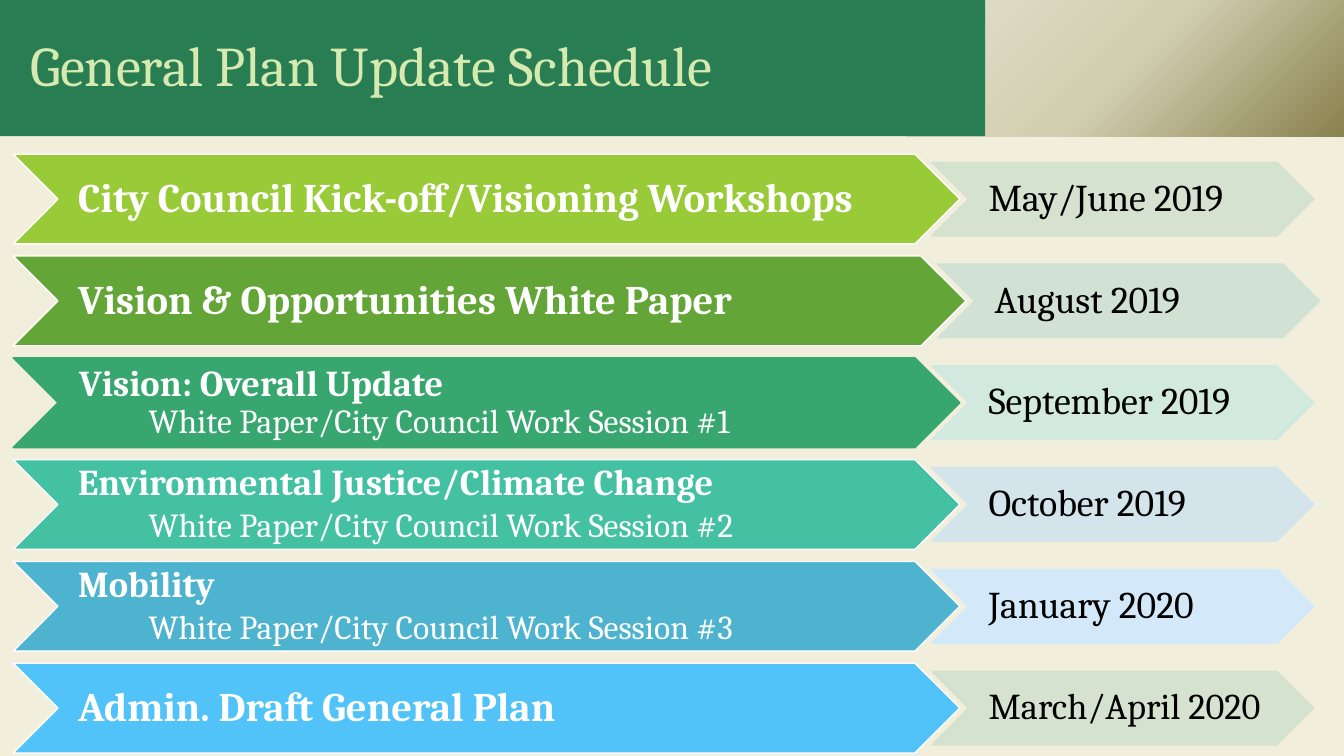
from lxml import etree
from pptx import Presentation
from pptx.dml.color import RGBColor
from pptx.enum.shapes import MSO_SHAPE
from pptx.enum.text import MSO_ANCHOR, PP_ALIGN
from pptx.oxml import parse_xml
from pptx.oxml.ns import qn
from pptx.util import Inches, Pt

RECT, PLATE, CHEVRON = MSO_SHAPE.RECTANGLE, MSO_SHAPE.PENTAGON, MSO_SHAPE.CHEVRON
MIDDLE, LEFT = MSO_ANCHOR.MIDDLE, PP_ALIGN.LEFT
WHITE = RGBColor(0xFF, 0xFF, 0xFF)
BLACK = RGBColor(0x00, 0x00, 0x00)
CREAM = RGBColor(0xF1, 0xEF, 0xDC)
PINE = RGBColor(0x29, 0x7D, 0x53)
PALE = RGBColor(0xD6, 0xEA, 0xAF)
LIME = RGBColor(0x99, 0xCB, 0x38)
LEAF = RGBColor(0x63, 0xA5, 0x37)
JADE = RGBColor(0x37, 0xA7, 0x6F)
TEAL = RGBColor(0x44, 0xC1, 0xA3)
SEA = RGBColor(0x4E, 0xB3, 0xCF)
SKY = RGBColor(0x51, 0xC3, 0xF9)
SAGE = RGBColor(0xD3, 0xE1, 0xCE)
MOSS = RGBColor(0xCE, 0xE1, 0xD5)
MINT = RGBColor(0xCF, 0xE9, 0xE0)
MIST = RGBColor(0xD0, 0xE5, 0xED)
ICE = RGBColor(0xD0, 0xE9, 0xFD)

# Grid: six rows of equal pitch, each a wide step and a narrow date
WIDTH, HEIGHT = 13.33, 7.5
HEAD = 0.18 * HEIGHT
TOP, PITCH = 1.53, 1.01
STEP_X, STEP_W, STEP_H = 0.13, 9.39, 0.89
DATE_X, DATE_W, DATE_H = 9.24, 3.79, 0.73
SHIFT = 0.06
TAB = 0.7

deck = Presentation()
deck.slide_width, deck.slide_height = Inches(WIDTH), Inches(HEIGHT)
slide = deck.slides.add_slide(deck.slide_layouts[6])
slide.background.fill.solid()
slide.background.fill.fore_color.rgb = CREAM


def draw(kind, x, y, w, h, fill, line=None, alpha=None):
    shape = slide.shapes.add_shape(kind, Inches(x), Inches(y), Inches(w), Inches(h))
    shape.shadow.inherit = False
    shape.fill.solid()
    shape.fill.fore_color.rgb = fill
    if line is None:
        shape.line.fill.background()
    else:
        shape.line.color.rgb = line
        shape.line.width = Pt(1)
    if alpha:
        for color in shape._element.spPr.iter(qn("a:srgbClr")):
            etree.SubElement(color, qn("a:alpha")).set("val", str(alpha * 1000))
    frame = shape.text_frame
    frame.word_wrap = True
    frame.vertical_anchor = MIDDLE
    if kind == CHEVRON:
        frame.margin_left, frame.margin_right = Inches(0.2), 0
        frame.margin_top = frame.margin_bottom = Inches(0.02)
    return shape


def write(shape, text, size, color, bold=False, left=0, first=0, after=0, join=False):
    frame = shape.text_frame
    para = frame.paragraphs[-1]
    if join:
        para.add_line_break()
    else:
        if para.runs:
            para = frame.add_paragraph()
        para.alignment = LEFT
        para.line_spacing = 0.9
        para.space_after = Pt(after)
        props = para._p.get_or_add_pPr()
        props.set("marL", str(Inches(left)))
        props.set("indent", str(Inches(first)))
    run = para.add_run()
    run.text = text
    run.font.name, run.font.size, run.font.bold = "Cambria", Pt(size), bold
    run.font.color.rgb = color


# Corner panel with a gradient spreading from its lower right
panel = draw(RECT, 8.99, 0, WIDTH - 8.99, HEAD, SAGE)
stops = "".join(
    f'<a:gs pos="{pos}000"><a:srgbClr val="{tone}"/></a:gs>'
    for pos, tone in ((0, "89814E"), (50, "D2CEB1"), (100, "E2DFCC")))
glow = parse_xml(
    '<a:gradFill xmlns:a="http://schemas.openxmlformats.org/drawingml/2006/main">'
    f'<a:gsLst>{stops}</a:gsLst><a:path path="circle">'
    '<a:fillToRect l="100000" t="100000"/></a:path></a:gradFill>')
props = panel._element.spPr
props.replace(props.find(qn("a:solidFill")), glow)

# Title bar
title = draw(PLATE, 0, 0, 9.77, HEAD, PINE)
title.adjustments[0] = 0
write(title, "General Plan Update Schedule", 40, PALE, left=0.2)

# Schedule: heading, session line, step fill, date, date fill
SESSION = "White Paper/City Council Work Session #"
rows = [
    ("City Council Kick-off/Visioning Workshops", None, LIME, "May/June 2019", SAGE),
    ("Vision & Opportunities White Paper", None, LEAF, "August 2019", MOSS),
    ("Vision: Overall Update", 1, JADE, "September 2019", MINT),
    ("Environmental Justice/Climate Change", 2, TEAL, "October 2019", MIST),
    ("Mobility", 3, SEA, "January 2020", ICE),
    ("Admin. Draft General Plan", None, SKY, "March/April 2020", SAGE),
]
for i, (head, part, fill, date, tint) in enumerate(rows):
    y = TOP + i * PITCH
    push = SHIFT if fill == LEAF else 0
    hang = part == 1  # one paragraph with a hanging indent

    step = draw(CHEVRON, STEP_X, y, STEP_W + push, STEP_H, fill, JADE if hang else WHITE)
    write(step, head, 26 if part else 29, WHITE, bold=True, after=4 if part else 0,
          left=TAB if hang else 0, first=0.01 - TAB if hang else 0)
    if part:
        write(step, f"{SESSION}{part}", 24, WHITE, left=TAB, after=4, join=hang)

    flag = draw(CHEVRON, DATE_X + push, y + (STEP_H - DATE_H) / 2, DATE_W, DATE_H,
                tint, tint, alpha=90)
    write(flag, date, 26 if i == len(rows) - 1 else 27, BLACK)

deck.save("out.pptx")
